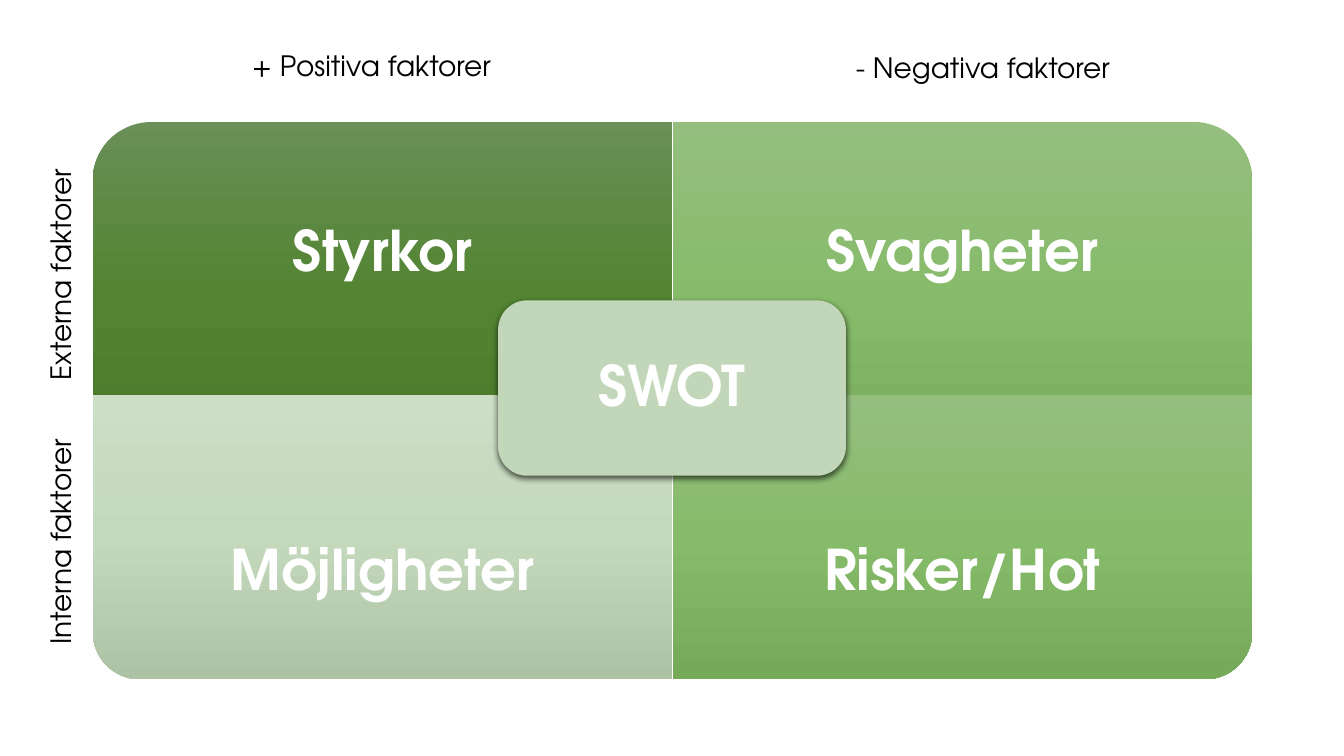
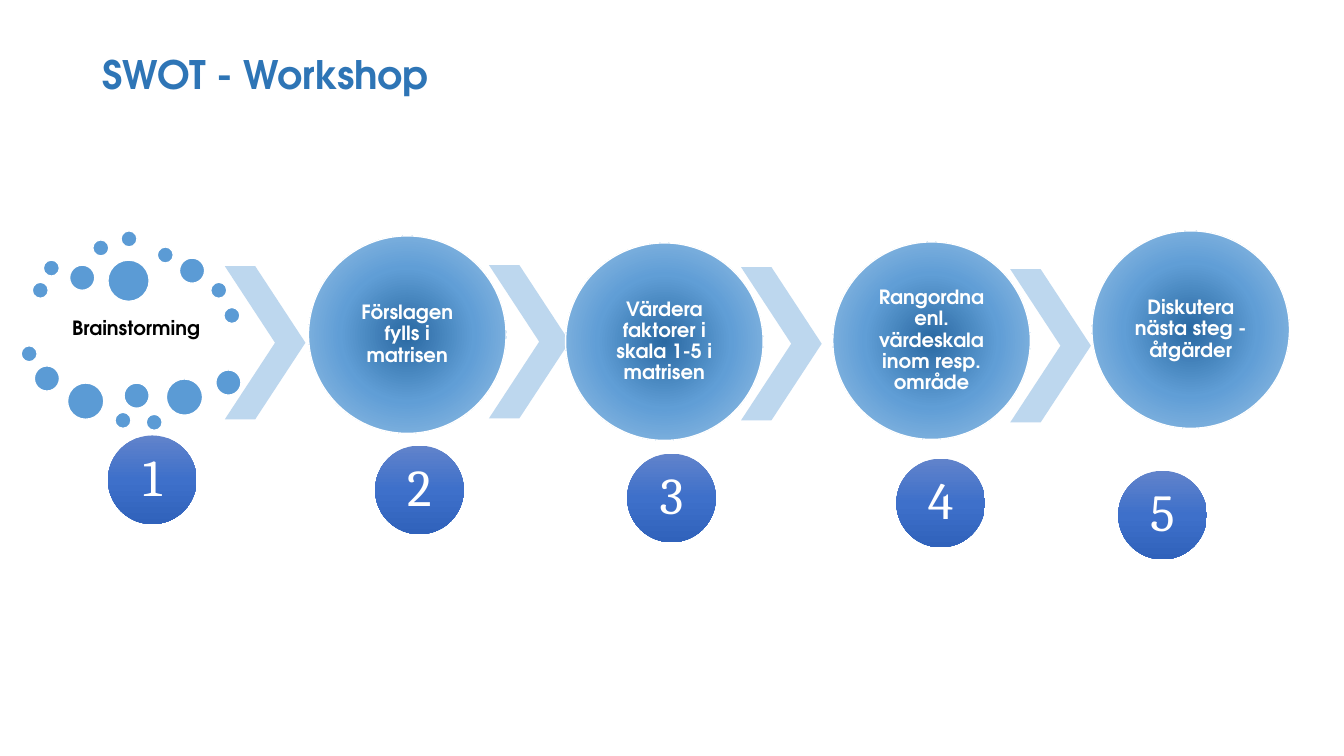
import pptx
import pptx.util
import pptx.dml.color
import pptx.enum.shapes
import pptx.enum.text
import pptx.oxml
import pptx.oxml.ns

Inches = pptx.util.Inches
Pt = pptx.util.Pt
SHAPE = pptx.enum.shapes.MSO_SHAPE
ALIGN = pptx.enum.text.PP_ALIGN
ANCHOR = pptx.enum.text.MSO_ANCHOR

SANS = "TeX Gyre Adventor"
SERIF = "Cambria"
WHITE, BLACK = "FFFFFF", "000000"
TITLE_BLUE, DOT_BLUE, ARROW_BLUE = "2E75B6", "5B9BD5", "BDD7EE"
CENTRE_GREEN = "C2D7B9"
DARK_GREENS = [(0, "6A8F57"), (50, "528431"), (100, "487828")]
MID_GREENS = [(0, "95BF7F"), (50, "86BB6A"), (100, "76AA5A")]
PALE_GREENS = [(0, "CDDEC6"), (50, "C4D9BB"), (100, "AEC3A5")]
BADGE_BLUES = [(0, "6183CB"), (50, "3E70CA"), (100, "3062BB")]
STEP_BLUES = [(0, "2A69A2"), (48, "609ED6"), (100, "9DC3E6")]
DOWNWARD = '<a:lin {ns} ang="5400000" scaled="0"/>'
OUTWARD = ('<a:path {ns} path="circle">'
           '<a:fillToRect l="50000" t="50000" r="50000" b="50000"/></a:path>')

MATRIX_LEFT, MATRIX_TOP, MATRIX_MIDDLE = 0.92, 1.21, 3.92
QUADRANT_WIDTH = 5.75
UPPER_HEIGHT, LOWER_HEIGHT = 3.48, 2.82
UPPER_TEXT, LOWER_TEXT = (1.21, 2.61), (4.62, 2.12)
STEP_SIZE, BADGE_SIZE = 1.96, 0.88
ARROW_WIDTH, ARROW_HEIGHT = 0.8, 1.52

QUADRANTS = [
    ("Styrkor", 0, 0, 270, DARK_GREENS),
    ("Svagheter", 1, 0, 0, MID_GREENS),
    ("Möjligheter", 0, 1, 180, PALE_GREENS),
    ("Risker/Hot", 1, 1, 90, MID_GREENS),
]
AXIS_LABELS = [
    ("+ Positiva faktorer", 2.4, 0.43, 2.59, 0),
    ("- Negativa faktorer", 8.39, 0.45, 2.76, 0),
    ("Interna faktorer", -0.54, 5.13, 2.29, 270),
    ("Externa faktorer", -0.57, 2.48, 2.34, 270),
]
DOTS = {
    0.16: [(0.32, 2.8), (0.43, 2.58), (0.92, 2.38), (1.2, 2.29), (1.56, 2.45),
           (2.09, 2.8), (2.22, 3.05), (0.21, 3.43), (1.14, 4.09), (1.45, 4.11)],
    0.25: [(0.69, 2.63), (1.78, 2.56), (0.34, 3.63), (1.23, 3.8), (2.14, 3.67)],
    0.36: [(0.67, 3.8), (1.65, 3.76)],
    0.41: [(1.07, 2.58)],
}
STEPS = [
    ("Förslagen fylls i matrisen", 3.06, 2.34),
    ("Värdera faktorer i skala 1-5 i matrisen", 5.61, 2.41),
    ("Rangordna enl. värdeskala inom resp. område", 8.26, 2.4),
    ("Diskutera nästa steg - åtgärder", 10.83, 2.29),
]
ARROWS = [(2.23, 2.64), (4.85, 2.63), (7.35, 2.65), (10.02, 2.67)]
BADGES = [(1.07, 4.32), (3.72, 4.42), (6.22, 4.5), (8.89, 4.55), (11.09, 4.67)]


def colour(value):
    return pptx.dml.color.RGBColor.from_string(value)


def make_element(markup):
    return pptx.oxml.parse_xml(markup.format(ns=pptx.oxml.ns.nsdecls("a")))


def fill_gradient(shape, stops, direction):
    shape.fill.gradient()
    gradient = shape.fill._xPr.find(pptx.oxml.ns.qn("a:gradFill"))
    gradient.clear()
    gradient.set("rotWithShape", "0")
    marks = "".join(
        f'<a:gs pos="{position * 1000}"><a:srgbClr val="{value}"/></a:gs>'
        for position, value in stops)
    gradient.append(make_element("<a:gsLst {ns}>" + marks + "</a:gsLst>"))
    gradient.append(make_element(direction))


def add_figure(page, kind, left, top, width, height, fill=None, outline=None):
    shape = page.shapes.add_shape(
        kind, Inches(left), Inches(top), Inches(width), Inches(height))
    shape.shadow.inherit = False
    if fill:
        shape.fill.solid()
        shape.fill.fore_color.rgb = colour(fill)
    if outline:
        shape.line.color.rgb = colour(outline)
        shape.line.width = Pt(1)
    else:
        shape.line.fill.background()
    return shape


def write_text(shape, text, size, value=WHITE, font=SANS, bold=True,
               align=ALIGN.CENTER, inset=None, spacing=0.9):
    frame = shape.text_frame
    frame.text = text
    frame.word_wrap = True
    frame.vertical_anchor = ANCHOR.MIDDLE
    if inset is not None:
        frame.margin_left = frame.margin_right = Inches(inset)
        frame.margin_top = frame.margin_bottom = Inches(inset)
    para = frame.paragraphs[0]
    para.alignment = align
    para.line_spacing = spacing
    for span in para.runs:
        span.font.name = font
        span.font.size = Pt(size)
        span.font.bold = bold
        span.font.color.rgb = colour(value)


def add_text(page, text, left, top, width, height, size, **style):
    box = page.shapes.add_textbox(
        Inches(left), Inches(top), Inches(width), Inches(height))
    write_text(box, text, size, **style)
    return box


def add_quadrant(page, text, column, row, rotation, stops):
    left = MATRIX_LEFT + column * QUADRANT_WIDTH
    top = (MATRIX_TOP, MATRIX_MIDDLE)[row]
    height = (UPPER_HEIGHT, LOWER_HEIGHT)[row]
    text_top, text_height = (UPPER_TEXT, LOWER_TEXT)[row]
    turned = rotation % 180 != 0
    shift = (QUADRANT_WIDTH - height) / 2 if turned else 0
    size = (height, QUADRANT_WIDTH) if turned else (QUADRANT_WIDTH, height)
    shape = add_figure(page, SHAPE.ROUND_1_RECTANGLE, left + shift, top - shift, *size)
    shape.rotation = rotation
    fill_gradient(shape, stops, DOWNWARD)
    add_text(page, text, left, text_top, QUADRANT_WIDTH, text_height, 40, inset=0.31)


def add_centre(page):
    shape = add_figure(page, SHAPE.ROUNDED_RECTANGLE, 4.94, 2.98, 3.45, 1.74, CENTRE_GREEN)
    write_text(shape, "SWOT", 40, inset=0.17)
    effects = shape.fill._xPr.find(pptx.oxml.ns.qn("a:effectLst"))
    effects.append(make_element(
        '<a:outerShdw {ns} blurRad="57150" dist="19050" dir="5400000" algn="ctr" '
        'rotWithShape="0"><a:srgbClr val="000000"><a:alpha val="63000"/>'
        '</a:srgbClr></a:outerShdw>'))


def add_axis_label(page, text, left, top, width, rotation):
    box = add_text(page, text, left, top, width, 0.44, 20, value=BLACK,
                   bold=False, align=ALIGN.LEFT, spacing=1.0)
    box.text_frame.word_wrap = False
    box.text_frame.vertical_anchor = ANCHOR.TOP
    box.rotation = rotation


def add_step(page, text, left, top):
    shape = add_figure(page, SHAPE.OVAL, left, top, STEP_SIZE, STEP_SIZE, outline=WHITE)
    fill_gradient(shape, STEP_BLUES, OUTWARD)
    write_text(shape, text, 14, inset=0.11)


def add_arrow(page, left, top):
    shape = add_figure(page, SHAPE.CHEVRON, left, top, ARROW_WIDTH, ARROW_HEIGHT, ARROW_BLUE)
    shape.adjustments[0] = 0.623


def add_badge(page, number, left, top):
    shape = add_figure(page, SHAPE.OVAL, left, top, BADGE_SIZE, BADGE_SIZE)
    fill_gradient(shape, BADGE_BLUES, DOWNWARD)
    write_text(shape, str(number), 37, font=SERIF, bold=False, inset=0.03)


def set_title(page, text):
    title = page.shapes.title
    title.left, title.top = Inches(0.92), Inches(0.04)
    title.width, title.height = Inches(11.5), Inches(1.45)
    write_text(title, text, 28, value=TITLE_BLUE, align=ALIGN.LEFT)


def build_matrix(deck):
    page = deck.slides.add_slide(deck.slide_layouts[6])
    for quadrant in QUADRANTS:
        add_quadrant(page, *quadrant)
    add_centre(page)
    for label in AXIS_LABELS:
        add_axis_label(page, *label)


def build_workshop(deck):
    page = deck.slides.add_slide(deck.slide_layouts[5])
    set_title(page, "SWOT - Workshop")
    add_text(page, "Brainstorming", 0.14, 2.74, 2.42, 1.06, 14, value=BLACK, inset=0.05)
    for size, places in DOTS.items():
        for left, top in places:
            add_figure(page, SHAPE.OVAL, left, top, size, size, DOT_BLUE, WHITE)
    for arrow in ARROWS:
        add_arrow(page, *arrow)
    for step in STEPS:
        add_step(page, *step)
    for number, place in enumerate(BADGES, 1):
        add_badge(page, number, *place)


def main():
    deck = pptx.Presentation()
    deck.slide_width = Inches(13.33)
    deck.slide_height = Inches(7.5)
    build_matrix(deck)
    build_workshop(deck)
    deck.save("out.pptx")


if __name__ == "__main__":
    main()
